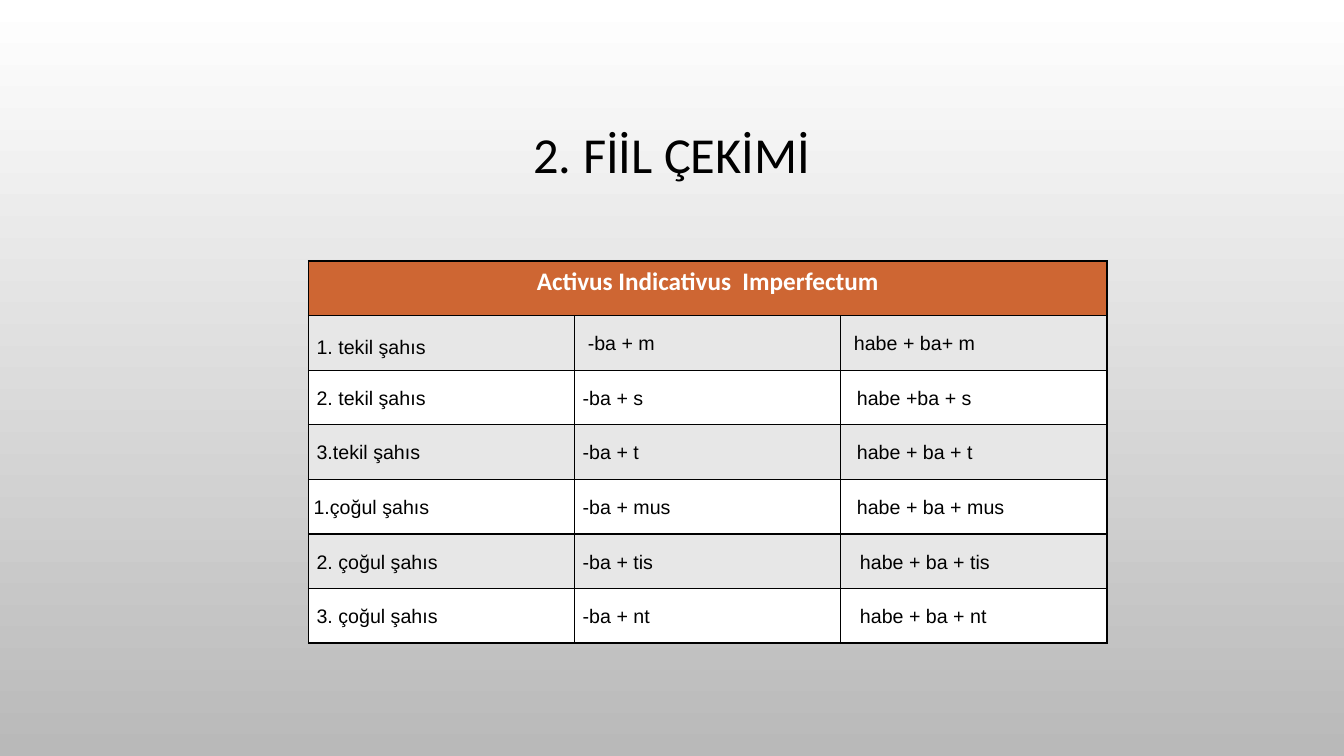
from lxml import etree
from pptx import Presentation
from pptx.dml.color import RGBColor
from pptx.enum import text
from pptx.oxml import ns
from pptx.util import Inches, Pt

BLACK = RGBColor(0x00, 0x00, 0x00)
WHITE = RGBColor(0xFF, 0xFF, 0xFF)
BACKGROUND_GRAY = RGBColor(0xB9, 0xB9, 0xB9)
BAND_GRAY = RGBColor(0xE7, 0xE7, 0xE7)
ORANGE = RGBColor(0xCE, 0x66, 0x33)

HEADING = "Activus Indicativus  Imperfectum"
CONJUGATIONS = [
    [("1. tekil şahıs", 0.08), ("-ba + m", 0.13), ("habe + ba+ m", 0.13)],
    [("2. tekil şahıs", 0.08), ("-ba + s", 0.08), ("habe +ba + s", 0.16)],
    [("3.tekil şahıs", 0.08), ("-ba + t", 0.08), ("habe + ba + t", 0.16)],
    [("1.çoğul şahıs", 0.05), ("-ba + mus", 0.08), ("habe + ba + mus", 0.16)],
    [("2. çoğul şahıs", 0.08), ("-ba + tis", 0.08), ("habe + ba + tis", 0.19)],
    [("3. çoğul şahıs", 0.08), ("-ba + nt", 0.08), ("habe + ba + nt", 0.19)],
]


def set_font(paragraph, name, size, color, bold=False):
    paragraph.font.name = name
    paragraph.font.size = Pt(size)
    paragraph.font.color.rgb = color
    paragraph.font.bold = bold


def paint_background(slide):
    fill = slide.background.fill
    fill.gradient()
    fill.gradient_angle = 270
    for stop, color in zip(fill.gradient_stops, (WHITE, BACKGROUND_GRAY)):
        stop.color.rgb = color


def add_title(slide, left, top, width, height):
    frame = slide.shapes.add_textbox(left, top, width, height).text_frame
    frame.word_wrap = True
    frame.vertical_anchor = text.MSO_ANCHOR.MIDDLE
    paragraph = frame.paragraphs[0]
    paragraph.text = "2. FİİL ÇEKİMİ"
    paragraph.alignment = text.PP_ALIGN.CENTER
    paragraph.line_spacing = 0.9
    set_font(paragraph, "Calibri", 36, BLACK)


def style_cell(cell, color):
    properties = cell._tc.get_or_add_tcPr()
    for side in ("lnL", "lnR", "lnT", "lnB"):
        line = etree.SubElement(properties, ns.qn(f"a:{side}"), w=str(Pt(1)))
        fill = etree.SubElement(line, ns.qn("a:solidFill"))
        etree.SubElement(fill, ns.qn("a:srgbClr"), val=str(BLACK))
    cell.fill.solid()
    cell.fill.fore_color.rgb = color


def fill_body_cell(cell, wording, indent, line_spacing):
    cell.margin_left = Inches(indent)
    cell.margin_right = cell.margin_top = cell.margin_bottom = 0
    cell.vertical_anchor = text.MSO_ANCHOR.MIDDLE
    paragraph = cell.text_frame.paragraphs[0]
    paragraph.text = wording
    paragraph.line_spacing = line_spacing
    set_font(paragraph, "Arial", 14, BLACK)


def add_conjugation_table(slide, left, top, width, height):
    row_count = len(CONJUGATIONS) + 1
    table = slide.shapes.add_table(row_count, 3, left, top, width, height).table
    for row in table.rows:
        row.height = height // row_count

    for cell in table.rows[0].cells:
        style_cell(cell, ORANGE)
    heading_cell = table.cell(0, 0)
    heading_cell.merge(table.cell(0, 2))
    paragraph = heading_cell.text_frame.paragraphs[0]
    paragraph.text = HEADING
    paragraph.alignment = text.PP_ALIGN.CENTER
    set_font(paragraph, "Calibri", 18, WHITE, bold=True)

    for row_index, conjugation in enumerate(CONJUGATIONS, start=1):
        for column_index, (wording, indent) in enumerate(conjugation):
            cell = table.cell(row_index, column_index)
            style_cell(cell, BAND_GRAY if row_index % 2 else WHITE)
            line_spacing = 1.4 if (row_index, column_index) == (1, 0) else 1.1
            fill_body_cell(cell, wording, indent, line_spacing)


def main():
    presentation = Presentation()
    presentation.slide_width = Inches(13.33)
    presentation.slide_height = Inches(7.5)
    slide = presentation.slides.add_slide(presentation.slide_layouts[6])
    paint_background(slide)
    add_title(slide, Inches(1), Inches(0.68), Inches(11.33), Inches(1.75))
    add_conjugation_table(slide, Inches(3.06), Inches(2.59), Inches(7.92), Inches(3.79))
    presentation.save("out.pptx")


if __name__ == "__main__":
    main()
